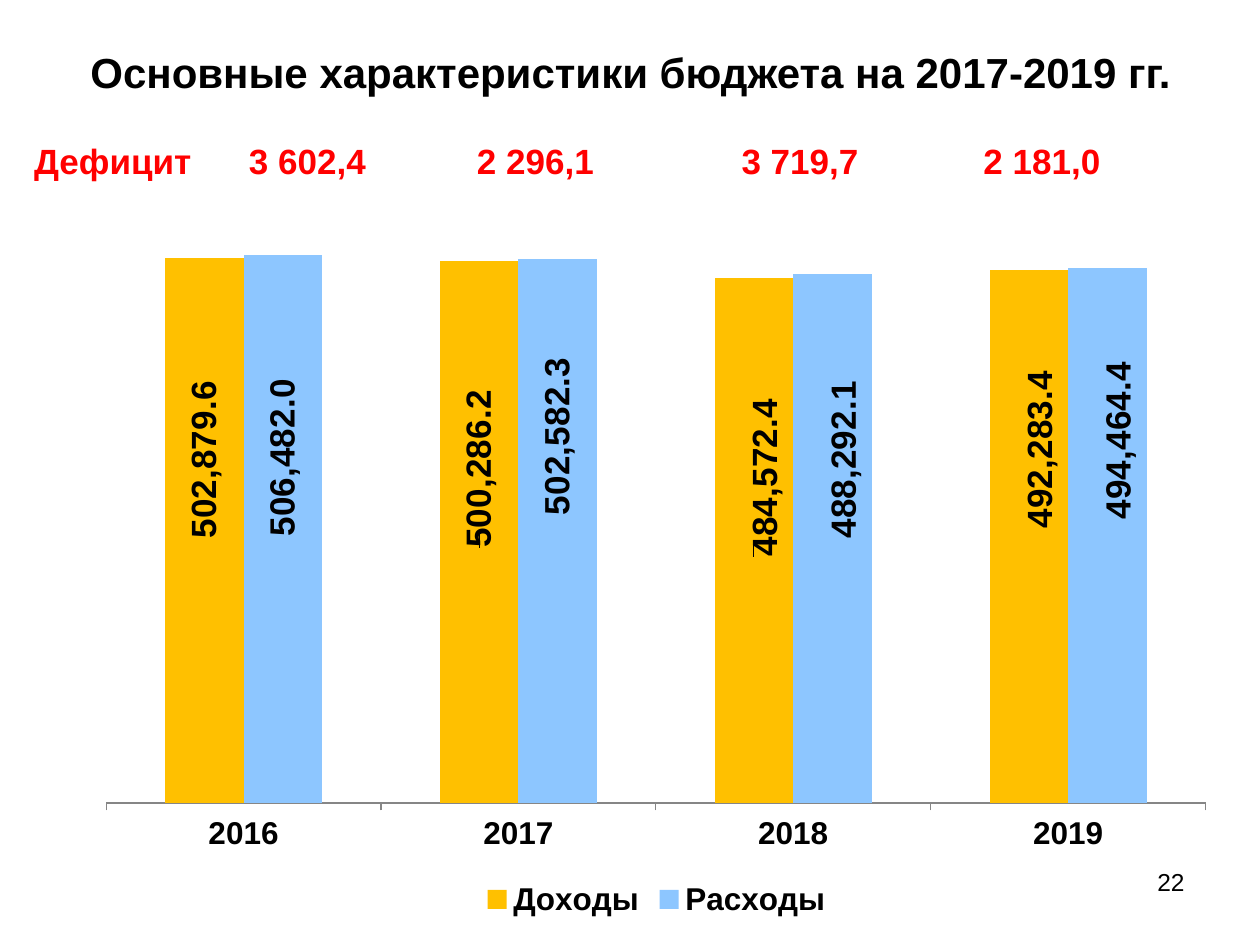
from lxml import etree
from pptx import Presentation
from pptx.chart.data import CategoryChartData
from pptx.dml.color import RGBColor
from pptx.enum.chart import (XL_CHART_TYPE, XL_LABEL_POSITION,
                             XL_LEGEND_POSITION, XL_TICK_MARK)
from pptx.enum.text import MSO_ANCHOR, PP_ALIGN
from pptx.oxml.ns import qn
from pptx.util import Inches, Pt

BLACK = RGBColor(0x00, 0x00, 0x00)
WHITE = RGBColor(0xFF, 0xFF, 0xFF)
RED = RGBColor(0xFF, 0x00, 0x00)
AXIS_GRAY = RGBColor(0x86, 0x86, 0x86)
AMBER = RGBColor(0xFF, 0xC0, 0x00)
LIGHT_BLUE = RGBColor(0x8D, 0xC6, 0xFF)


def set_font(font, size, color=BLACK, bold=True):
    font.name = "Arial"
    font.size = Pt(size)
    font.bold = bold
    font.color.rgb = color


def make_layout(**settings):
    """Manual chart layout element."""
    layout = etree.Element(qn("c:layout"))
    manual = etree.SubElement(layout, qn("c:manualLayout"))
    for name, value in settings.items():
        etree.SubElement(manual, qn(f"c:{name}")).set("val", str(value))
    return layout


deck = Presentation()
deck.slide_width, deck.slide_height = Inches(10), Inches(7.5)
page = deck.slides.add_slide(deck.slide_layouts[5])

# Title
title = page.shapes.title
title.left, title.top = Inches(0.17), Inches(0.3)
title.width, title.height = Inches(9.67), Inches(0.53)
title.text_frame.text = "Основные характеристики бюджета на 2017-2019 гг."
title.text_frame.vertical_anchor = MSO_ANCHOR.MIDDLE
heading = title.text_frame.paragraphs[0]
heading.alignment = PP_ALIGN.CENTER
set_font(heading.font, 24)

# Income and spending chart
data = CategoryChartData(number_format="#,##0.0")
data.categories = ["2016", "2017", "2018", "2019"]
data.add_series("Доходы", [502879.6, 500286.2, 484572.4, 492283.4])
data.add_series("Расходы", [506482.0, 502582.3, 488292.1, 494464.4])
chart = page.shapes.add_chart(
    XL_CHART_TYPE.COLUMN_CLUSTERED, Inches(0.67), Inches(1.08),
    Inches(9.08), Inches(6.25), data).chart
chart.has_title = False
set_font(chart.font, 18)
chart.has_legend = True
chart.legend.position = XL_LEGEND_POSITION.BOTTOM
chart.legend.include_in_layout = False
set_font(chart.legend.font, 18)

years = chart.category_axis
years.major_tick_mark = XL_TICK_MARK.OUTSIDE
years.format.line.color.rgb = AXIS_GRAY
set_font(years.tick_labels.font, 18)
amounts = chart.value_axis
amounts.minimum_scale, amounts.maximum_scale = 200, 600000
amounts.has_major_gridlines = False
amounts.visible = False

plot_area = chart._chartSpace.chart.plotArea
for old_layout in plot_area.findall(qn("c:layout")):
    plot_area.remove(old_layout)
plot_area.insert(0, make_layout(
    layoutTarget="inner", xMode="edge", yMode="edge",
    x=0.019, y=0.022, w=0.961, h=0.825))

# Bars, with upright labels shifted from the bar centres
plot = chart.plots[0]
plot.gap_width, plot.overlap = 150, 0
plot.vary_by_categories = False
label_shifts = [
    [(0, -0.09), (0, -0.08), (0.01, -0.08), (0.01, -0.11)],
    [(0, -0.09), (0, -0.12), (0.01, -0.1), (0.01, -0.12)],
]
for series, color, shifts in zip(plot.series, (AMBER, LIGHT_BLUE), label_shifts):
    series.format.fill.solid()
    series.format.fill.fore_color.rgb = color
    for index, (x, y) in enumerate(shifts):
        label = series.points[index].data_label
        set_font(label.font, 20)
        label.position = XL_LABEL_POSITION.CENTER
        element = label._dLbl
        element.find(qn("c:idx")).addnext(make_layout(x=x, y=y))
        body = element.find(qn("c:txPr")).find(qn("a:bodyPr"))
        body.set("rot", "-5400000")
        body.set("vert", "horz")

# Page number
number_box = page.shapes.add_textbox(
    Inches(7.17), Inches(6.83), Inches(2.33), Inches(0.52))
number_box.text_frame.word_wrap = True
number = number_box.text_frame.paragraphs[0]
number.text = "22"
number.alignment = PP_ALIGN.RIGHT
set_font(number.font, 14, bold=False)

# Deficit row
deficits = ["Дефицит", "3 602,4", "2 296,1", "3 719,7", "2 181,0"]
widths = [1.54, 1.46, 2.16, 2.04, 1.8]
table = page.shapes.add_table(
    1, len(deficits), Inches(0.17), Inches(1.08), Inches(9), Inches(0.42)).table
table.first_row = table.horz_banding = False
for column, (text, width) in enumerate(zip(deficits, widths)):
    table.columns[column].width = Inches(width)
    cell = table.cell(0, column)
    cell.fill.solid()
    cell.fill.fore_color.rgb = WHITE
    cell.text = text
    para = cell.text_frame.paragraphs[0]
    para.alignment = PP_ALIGN.CENTER if column else PP_ALIGN.LEFT
    set_font(para.font, 20, RED)

deck.save("out.pptx")
